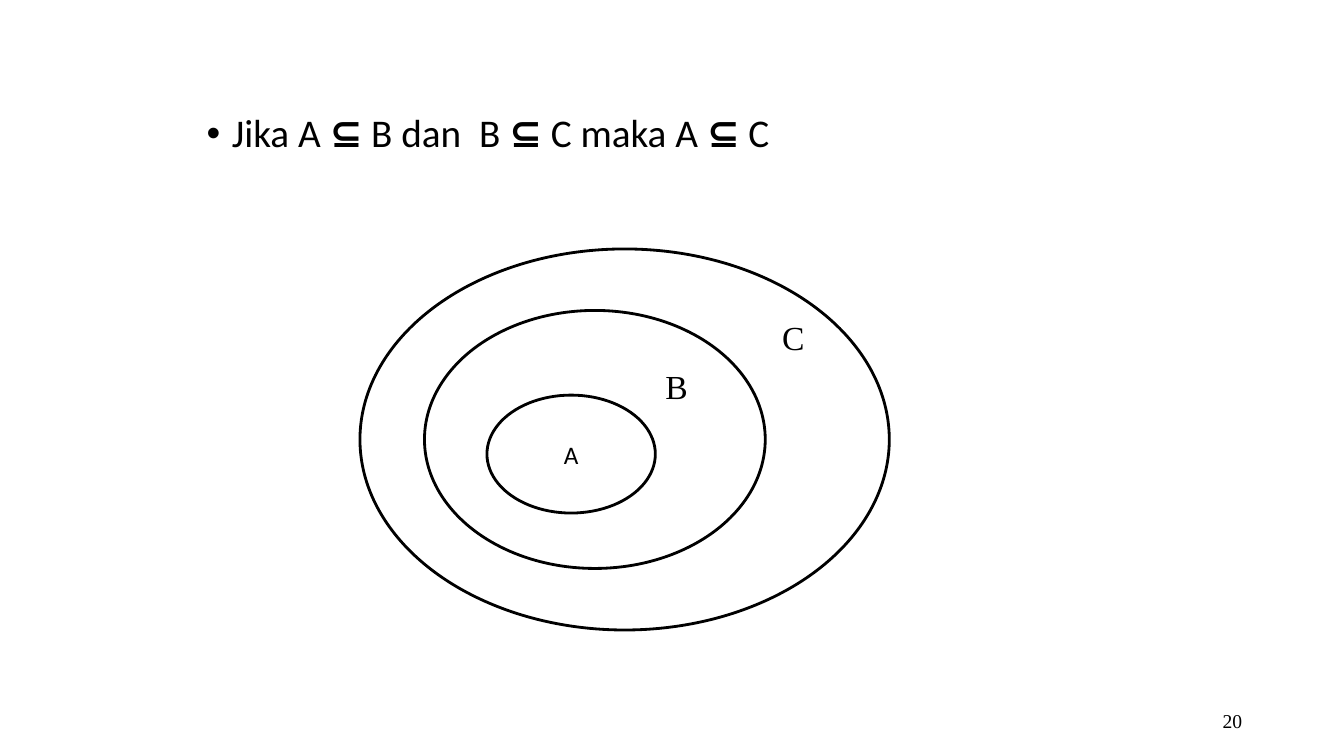
from dataclasses import dataclass

from lxml import etree
from pptx import Presentation
from pptx.dml.color import RGBColor
from pptx.enum.shapes import MSO_SHAPE
from pptx.enum.text import MSO_ANCHOR, MSO_AUTO_SIZE, PP_ALIGN
from pptx.oxml.ns import qn
from pptx.util import Inches, Pt

ELLIPSE = MSO_SHAPE.OVAL
TOP, MIDDLE = MSO_ANCHOR.TOP, MSO_ANCHOR.MIDDLE
LEFT, CENTER, RIGHT = PP_ALIGN.LEFT, PP_ALIGN.CENTER, PP_ALIGN.RIGHT
NO_AUTOFIT, GROW = MSO_AUTO_SIZE.NONE, MSO_AUTO_SIZE.SHAPE_TO_FIT_TEXT


@dataclass(frozen=True)
class Theme:
    ink: RGBColor = RGBColor(0, 0, 0)
    body_font: str = "Calibri"
    label_font: str = "Times New Roman"
    body_size: int = 28
    label_size: int = 24
    inner_size: int = 18
    number_size: int = 14
    outline: int = 2


class SlideBuilder:
    def __init__(self, slide, theme):
        self.slide = slide
        self.theme = theme

    def apply(self, target, formats):
        for name, value in formats.items():
            setattr(target, name, value)

    def add_run(self, paragraph, text, font, size, bold=False):
        run = paragraph.add_run()
        run.text = text
        self.apply(run.font, {"name": font, "size": Pt(size), "bold": bold})
        run.font.color.rgb = self.theme.ink

    def bullet(self, box, text, bold_symbol):
        """Fill the body placeholder with one bullet whose symbol is bold."""
        body = self.slide.placeholders[1]
        self.apply(body, dict(zip(("left", "top", "width", "height"), map(Inches, box))))
        self.apply(body.text_frame, {"word_wrap": True, "auto_size": NO_AUTOFIT,
                                     "vertical_anchor": TOP})
        paragraph = body.text_frame.paragraphs[0]
        self.apply(paragraph, {"alignment": LEFT, "line_spacing": 0.9, "space_before": Pt(0)})
        properties = paragraph._p.get_or_add_pPr()
        properties.set("marL", str(Inches(0.25)))
        properties.set("indent", str(Inches(-0.25)))
        etree.SubElement(properties, qn("a:buFont")).set("typeface", "Arial")
        etree.SubElement(properties, qn("a:buChar")).set("char", "•")
        for index, part in enumerate(text.split(bold_symbol)):
            if index:
                self.add_run(paragraph, bold_symbol, self.theme.body_font,
                             self.theme.body_size, bold=True)
            self.add_run(paragraph, part, self.theme.body_font, self.theme.body_size)

    def text(self, box, text, size, alignment=LEFT, **frame_formats):
        shape = self.slide.shapes.add_textbox(*map(Inches, box))
        self.apply(shape.text_frame, frame_formats)
        paragraph = shape.text_frame.paragraphs[0]
        paragraph.alignment = alignment
        self.add_run(paragraph, text, self.theme.label_font, size)

    def ellipse(self, box, text=""):
        shape = self.slide.shapes.add_shape(ELLIPSE, *map(Inches, box))
        shape.shadow.inherit = False
        shape.fill.background()
        shape.line.color.rgb = self.theme.ink
        shape.line.width = Pt(self.theme.outline)
        if text:
            shape.text_frame.vertical_anchor = MIDDLE
            paragraph = shape.text_frame.paragraphs[0]
            paragraph.alignment = CENTER
            self.add_run(paragraph, text, self.theme.body_font, self.theme.inner_size)


def main():
    presentation = Presentation()
    presentation.slide_width = Inches(13.33)
    presentation.slide_height = Inches(7.5)
    slide = presentation.slides.add_slide(presentation.slide_layouts[1])
    theme = Theme()
    builder = SlideBuilder(slide, theme)

    # This slide has no title
    title = slide.shapes.title.element
    title.getparent().remove(title)

    # Statement
    builder.bullet((1.95, 1.08, 8.5, 5.75), "Jika A ⊆ B dan  B ⊆ C maka A ⊆ C", "⊆")

    # Slide number
    builder.text((9.42, 6.95, 3, 0.4), "20", theme.number_size, RIGHT,
                 word_wrap=True, vertical_anchor=MIDDLE)

    # Nested sets, innermost first
    builder.ellipse((4.83, 3.92, 1.67, 1.17), "A")
    builder.ellipse((4.21, 3.08, 3.38, 2.56))
    builder.ellipse((3.57, 2.47, 5.25, 3.78))

    # Labels of the outer sets
    for label, left, top in (("B", 6.5, 3.58), ("C", 7.66, 3.09)):
        builder.text((left, top, 0.43, 0.51), label, theme.label_size,
                     word_wrap=False, auto_size=GROW)

    presentation.save("out.pptx")


if __name__ == "__main__":
    main()
